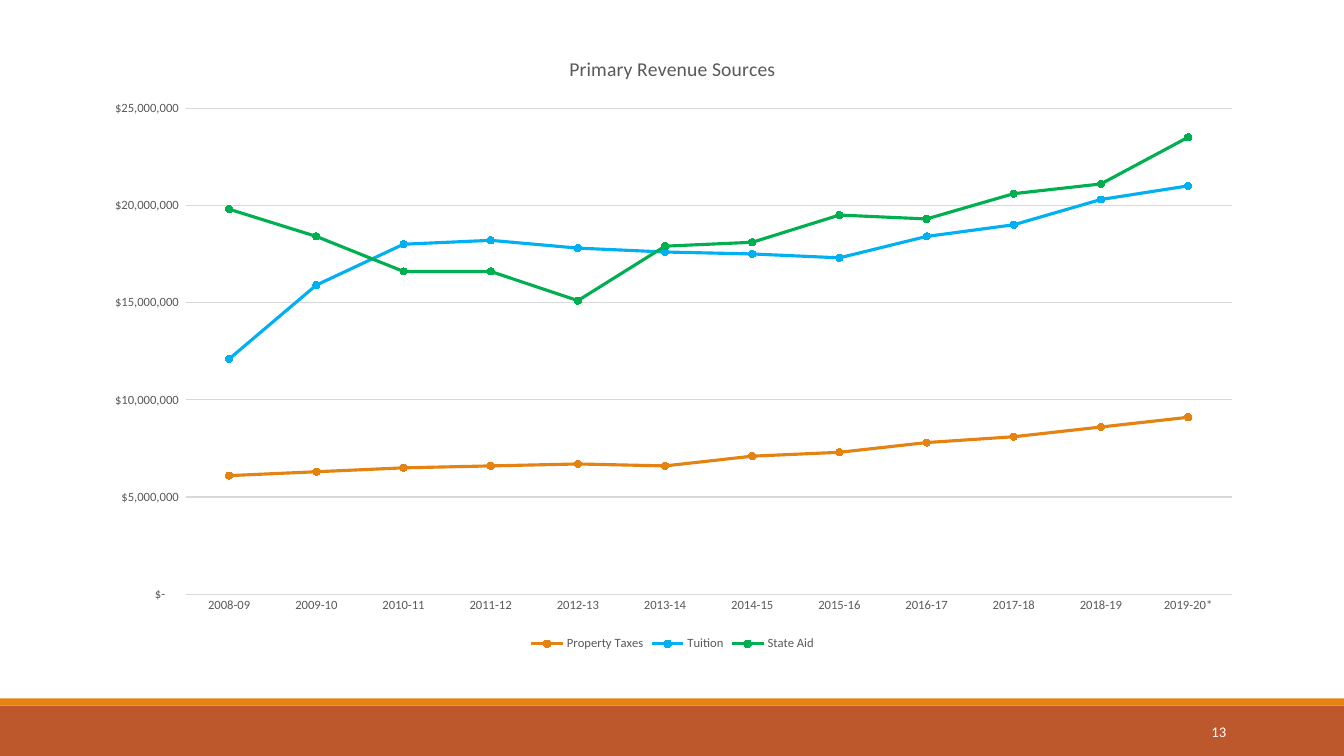
"""Build the primary revenue sources slide with its line chart and footer bands."""
from dataclasses import dataclass

from lxml import etree
from pptx import Presentation
from pptx.chart.axis import _BaseAxis
from pptx.chart.chart import Chart
from pptx.chart.data import CategoryChartData
from pptx.dml.color import RGBColor
from pptx.enum.chart import XL_CHART_TYPE, XL_LEGEND_POSITION, XL_MARKER_STYLE, XL_TICK_MARK
from pptx.enum.shapes import MSO_SHAPE
from pptx.enum.text import MSO_ANCHOR, PP_ALIGN
from pptx.oxml.ns import qn
from pptx.slide import Slide
from pptx.text.text import Font
from pptx.util import Emu, Inches, Pt

LINE_MARKERS = XL_CHART_TYPE.LINE_MARKERS
LEGEND_BOTTOM = XL_LEGEND_POSITION.BOTTOM
CIRCLE = XL_MARKER_STYLE.CIRCLE
NO_TICK = XL_TICK_MARK.NONE
RECTANGLE = MSO_SHAPE.RECTANGLE
MIDDLE = MSO_ANCHOR.MIDDLE
RIGHT = PP_ALIGN.RIGHT

SLIDE_WIDTH = Inches(13.33)
SLIDE_HEIGHT = Inches(7.5)
COLUMNS = 160
ROWS = 90


@dataclass(frozen=True)
class Theme:
    font: str = "Calibri"
    white: str = "FFFFFF"
    rust: str = "BD582C"
    orange: str = "E48312"
    blue: str = "00B0F0"
    green: str = "00B050"
    text: str = "595959"
    grid: str = "D9D9D9"
    title_size: float = 14
    label_size: float = 9
    number_size: float = 10.5
    series_width: float = 2.25
    grid_width: float = 0.75
    marker_size: int = 5


@dataclass(frozen=True)
class Box:
    column: float
    row: float
    columns: float
    rows: float

    def place(self) -> tuple[Emu, Emu, Emu, Emu]:
        return (
            Emu(round(SLIDE_WIDTH * self.column / COLUMNS)),
            Emu(round(SLIDE_HEIGHT * self.row / ROWS)),
            Emu(round(SLIDE_WIDTH * self.columns / COLUMNS)),
            Emu(round(SLIDE_HEIGHT * self.rows / ROWS)),
        )


@dataclass(frozen=True)
class Band:
    box: Box
    color: str


@dataclass(frozen=True)
class Revenue:
    name: str
    color: str
    millions: tuple[float, ...]


THEME = Theme()
BANDS = (
    Band(Box(0, 84, COLUMNS, 6), THEME.rust),
    Band(Box(0, 83.16, COLUMNS, 0.84), THEME.orange),
)
CHART_BOX = Box(10.56, 4.08, 139, 73.92)
NUMBER_BOX = Box(130, 84.72, 17.16, 4.8)
PLOT_SHARES = {"x": 0.083, "y": 0.119, "w": 0.896, "h": 0.783}
DOLLARS = r'_("$"* #,##0_);_("$"* \(#,##0\);_("$"* "-"??_);_(@_)'
YEARS = [f"20{year:02}-{year + 1:02}" for year in range(8, 19)] + ["2019-20*"]
REVENUES = (
    Revenue("Property Taxes", THEME.orange,
            (6.1, 6.3, 6.5, 6.6, 6.7, 6.6, 7.1, 7.3, 7.8, 8.1, 8.6, 9.1)),
    Revenue("Tuition", THEME.blue,
            (12.1, 15.9, 18, 18.2, 17.8, 17.6, 17.5, 17.3, 18.4, 19, 20.3, 21)),
    Revenue("State Aid", THEME.green,
            (19.8, 18.4, 16.6, 16.6, 15.1, 17.9, 18.1, 19.5, 19.3, 20.6, 21.1, 23.5)),
)


def style_font(font: Font, size: float, color: str) -> None:
    font.name = THEME.font
    font.size = Pt(size)
    font.bold = False
    font.color.rgb = RGBColor.from_string(color)


def add_band(slide: Slide, band: Band) -> None:
    shape = slide.shapes.add_shape(RECTANGLE, *band.box.place())
    shape.shadow.inherit = False
    shape.fill.solid()
    shape.fill.fore_color.rgb = RGBColor.from_string(band.color)
    shape.line.fill.background()


def style_axis(axis: _BaseAxis) -> None:
    axis.major_tick_mark = NO_TICK
    axis.minor_tick_mark = NO_TICK
    style_font(axis.tick_labels.font, THEME.label_size, THEME.text)


def set_plot_layout(chart: Chart) -> None:
    plot_area = chart.element.find(".//" + qn("c:plotArea"))
    for layout in plot_area.findall(qn("c:layout")):
        plot_area.remove(layout)
    layout = etree.Element(qn("c:layout"))
    manual = etree.SubElement(layout, qn("c:manualLayout"))
    settings = {"layoutTarget": "inner", "xMode": "edge", "yMode": "edge", **PLOT_SHARES}
    for name, value in settings.items():
        etree.SubElement(manual, qn(f"c:{name}")).set("val", str(value))
    plot_area.insert(0, layout)


def add_revenue_chart(slide: Slide) -> None:
    data = CategoryChartData(number_format=DOLLARS)
    data.categories = YEARS
    for revenue in REVENUES:
        data.add_series(revenue.name, [round(value * 1_000_000) for value in revenue.millions])
    chart = slide.shapes.add_chart(LINE_MARKERS, *CHART_BOX.place(), data).chart
    style_font(chart.font, THEME.label_size, THEME.text)

    chart.has_title = True
    title = chart.chart_title.text_frame.paragraphs[0].add_run()
    title.text = "Primary Revenue Sources"
    style_font(title.font, THEME.title_size, THEME.text)
    chart.chart_title.include_in_layout = False

    chart.has_legend = True
    chart.legend.position = LEGEND_BOTTOM
    chart.legend.include_in_layout = False
    style_font(chart.legend.font, THEME.label_size, THEME.text)

    years, dollars = chart.category_axis, chart.value_axis
    style_axis(years)
    style_axis(dollars)
    dollars.minimum_scale = 0
    dollars.maximum_scale = 25_000_000
    dollars.major_unit = 5_000_000
    dollars.tick_labels.number_format = DOLLARS
    dollars.tick_labels.number_format_is_linked = False
    dollars.format.line.fill.background()
    for line in (years.format.line, dollars.major_gridlines.format.line):
        line.color.rgb = RGBColor.from_string(THEME.grid)
        line.width = Pt(THEME.grid_width)

    plot = chart.plots[0]
    plot.vary_by_categories = False
    for series, revenue in zip(plot.series, REVENUES):
        color = RGBColor.from_string(revenue.color)
        series.smooth = False
        series.format.line.color.rgb = color
        series.format.line.width = Pt(THEME.series_width)
        series.marker.style = CIRCLE
        series.marker.size = THEME.marker_size
        series.marker.format.fill.solid()
        series.marker.format.fill.fore_color.rgb = color
        series.marker.format.line.color.rgb = color
    set_plot_layout(chart)


def add_slide_number(slide: Slide) -> None:
    frame = slide.shapes.add_textbox(*NUMBER_BOX.place()).text_frame
    frame.word_wrap = True
    frame.vertical_anchor = MIDDLE
    paragraph = frame.paragraphs[0]
    paragraph.alignment = RIGHT
    run = paragraph.add_run()
    run.text = "13"
    style_font(run.font, THEME.number_size, THEME.white)


def main() -> None:
    presentation = Presentation()
    presentation.slide_width = SLIDE_WIDTH
    presentation.slide_height = SLIDE_HEIGHT
    slide = presentation.slides.add_slide(presentation.slide_layouts[6])
    for band in BANDS:
        add_band(slide, band)
    add_revenue_chart(slide)
    add_slide_number(slide)
    presentation.save("out.pptx")


if __name__ == "__main__":
    main()
